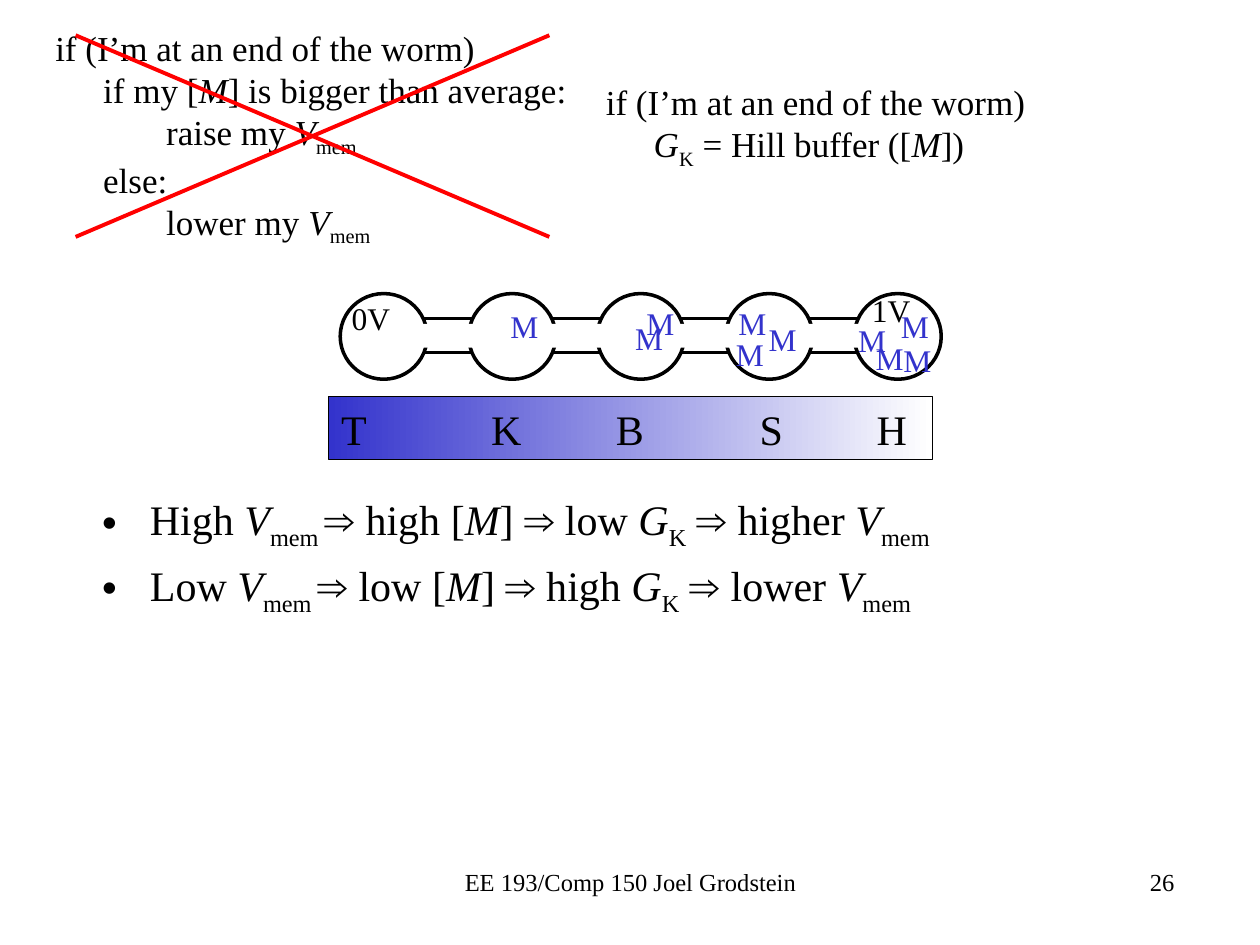
from dataclasses import dataclass

from pptx import Presentation
from pptx import oxml
from pptx import util as u
from pptx.dml.color import RGBColor
from pptx.enum import shapes, text
from pptx.oxml.ns import qn
from pptx.slide import Slide

BLACK = RGBColor(0, 0, 0)
WHITE = RGBColor(255, 255, 255)
BLUE = RGBColor(0x33, 0x33, 0xCC)
RED = RGBColor(255, 0, 0)
LEVEL_INDENTS = [0, 0.38, 0.88]
NO_MARGINS = (0, 0, 0, 0)


@dataclass
class SlideBuilder:
    slide: Slide
    font: str = "Times New Roman"

    def fill_paragraph(self, para, markup, size, color=BLACK, align=text.PP_ALIGN.LEFT):
        """Fill a paragraph; *...* is italic and ~...~ is subscript."""
        para.alignment = align
        para.font.name = self.font
        para.font.size = u.Pt(size)
        para.font.color.rgb = color
        for i, chunk in enumerate(markup.split("*")):
            for j, piece in enumerate(chunk.split("~")):
                if not piece:
                    continue
                span = para.add_run()
                span.text = piece
                if i % 2:
                    span.font.italic = True
                if j % 2:
                    span._r.get_or_add_rPr().set("baseline", "-25000")

    def indent(self, para, left, first=0):
        properties = para._p.get_or_add_pPr()
        properties.set("marL", str(u.Inches(left)))
        properties.set("indent", str(u.Inches(first)))

    def tab_stops(self, para, positions):
        properties = para._p.get_or_add_pPr()
        tabs = oxml.parse_xml(
            '<a:tabLst xmlns:a="http://schemas.openxmlformats.org/drawingml/2006/main"/>')
        for position in positions:
            tab = tabs.makeelement(qn("a:tab"), {"pos": str(u.Inches(position)), "algn": "l"})
            tabs.append(tab)
        properties.insert_element_before(tabs, "a:defRPr", "a:extLst")

    def paragraphs(self, frame, count):
        return [frame.paragraphs[0]] + [frame.add_paragraph() for _ in range(count - 1)]

    def text_box(self, at, lines, size, align=text.PP_ALIGN.LEFT):
        """Add a wrapped box from (level, markup) lines."""
        frame = self.slide.shapes.add_textbox(*map(u.Inches, at)).text_frame
        frame.word_wrap = True
        for para, (level, markup) in zip(self.paragraphs(frame, len(lines)), lines):
            para.level = level
            self.indent(para, LEVEL_INDENTS[level])
            self.fill_paragraph(para, markup, size, align=align)

    def label(self, left, top, width, markup, color):
        at = (left, top, width, 0.3)
        frame = self.slide.shapes.add_textbox(*map(u.Inches, at)).text_frame
        frame.word_wrap = False
        frame.vertical_anchor = text.MSO_ANCHOR.MIDDLE
        (frame.margin_left, frame.margin_top,
         frame.margin_right, frame.margin_bottom) = NO_MARGINS
        self.fill_paragraph(frame.paragraphs[0], markup, 18, color)

    def bullets(self, at, lines):
        title = self.slide.shapes.title.element
        title.getparent().remove(title)
        body = self.slide.placeholders[1]
        body.left, body.top, body.width, body.height = map(u.Inches, at)
        frame = body.text_frame
        frame.auto_size = text.MSO_AUTO_SIZE.NONE
        for para, markup in zip(self.paragraphs(frame, len(lines)), lines):
            self.indent(para, 0.38, -0.38)
            para.space_before = u.Pt(4.8)
            self.fill_paragraph(para, markup, 24)

    def shape(self, kind, at, line_width=None):
        shape = self.slide.shapes.add_shape(kind, *map(u.Inches, at))
        shape.shadow.inherit = False
        shape.fill.solid()
        shape.fill.fore_color.rgb = WHITE
        if line_width:
            shape.line.color.rgb = BLACK
            shape.line.width = u.Pt(line_width)
        else:
            shape.line.fill.background()
        return shape

    def gradient_bar(self, at, letters, tabs):
        bar = self.shape(shapes.MSO_SHAPE.RECTANGLE, at, 0.75)
        bar.fill.gradient()
        bar.fill.gradient_angle = 0
        for stop, position, color in zip(bar.fill.gradient_stops, (0, 1), (BLUE, WHITE)):
            stop.position = position
            stop.color.rgb = color
        para = bar.text_frame.paragraphs[0]
        self.fill_paragraph(para, "\t".join(letters), 24)
        self.tab_stops(para, tabs)

    def cross(self, left, top, right, bottom):
        group = self.slide.shapes.add_group_shape()
        for start, end in ((top, bottom), (bottom, top)):
            line = group.shapes.add_connector(
                shapes.MSO_CONNECTOR.STRAIGHT, *map(u.Inches, (left, start, right, end)))
            line.line.color.rgb = RED
            line.line.width = u.Pt(2.25)
            properties = line.element.spPr
            properties.append(properties.makeelement(qn("a:effectLst"), {}))


def main():
    deck = Presentation()
    deck.slide_width, deck.slide_height = u.Inches(10), u.Inches(7.5)
    page = SlideBuilder(deck.slides.add_slide(deck.slide_layouts[1]))

    page.bullets((0.71, 3.87, 8.84, 2.55), [
        "High *V*~mem ~⇒ high [*M*] ⇒ low *G*~K~ ⇒ higher *V*~mem~",
        "Low *V*~mem ~⇒ low [*M*] ⇒ high *G*~K~ ⇒ lower *V*~mem~",
    ])
    page.text_box((6.25, 6.83, 3.17, 0.5), [(0, "26")], 14, text.PP_ALIGN.RIGHT)
    page.text_box((3.42, 6.83, 3.17, 0.34), [(0, "EE 193/Comp 150 Joel Grodstein")],
                  14, text.PP_ALIGN.CENTER)

    condition = (0, "if (I’m at an end of the worm)")
    page.text_box((4.71, 0.59, 4.42, 0.77),
                  [condition, (1, "*G*~K~ = Hill buffer ([*M*])")], 20)
    page.text_box((0.34, 0.16, 4.42, 1.78), [
        condition,
        (1, "if my [*M*] is bigger than average:"),
        (2, "raise my *V*~mem~"),
        (1, "else:"),
        (2, "lower my *V*~mem~"),
    ], 20)

    # Worm: five cells joined by an open channel
    page.shape(shapes.MSO_SHAPE.RECTANGLE, (3.18, 2.53, 3.98, 0.27), 2)
    for cell in range(5):
        page.shape(shapes.MSO_SHAPE.OVAL, (2.7 + 1.02 * cell, 2.33, 0.69, 0.68), 2)
    page.shape(shapes.MSO_SHAPE.RECTANGLE, (3.14, 2.57, 4.05, 0.19))

    molecules = [(4.05, 2.44), (5.13, 2.41), (5.04, 2.53),
                 (5.86, 2.41), (5.84, 2.66), (6.1, 2.54),
                 (6.81, 2.55), (7.15, 2.44), (6.95, 2.69), (7.17, 2.71)]
    for left, top in molecules:
        page.label(left, top, 0.22, "M", BLUE)
    page.label(2.79, 2.37, 0.31, "0V", BLACK)
    page.label(6.92, 2.31, 0.31, "1V", BLACK)

    page.gradient_bar((2.61, 3.15, 4.79, 0.5), "TKBSH", (1.19, 2.18, 3.32, 4.25))
    page.cross(0.6, 0.28, 4.36, 1.88)
    deck.save("out.pptx")


if __name__ == "__main__":
    main()
